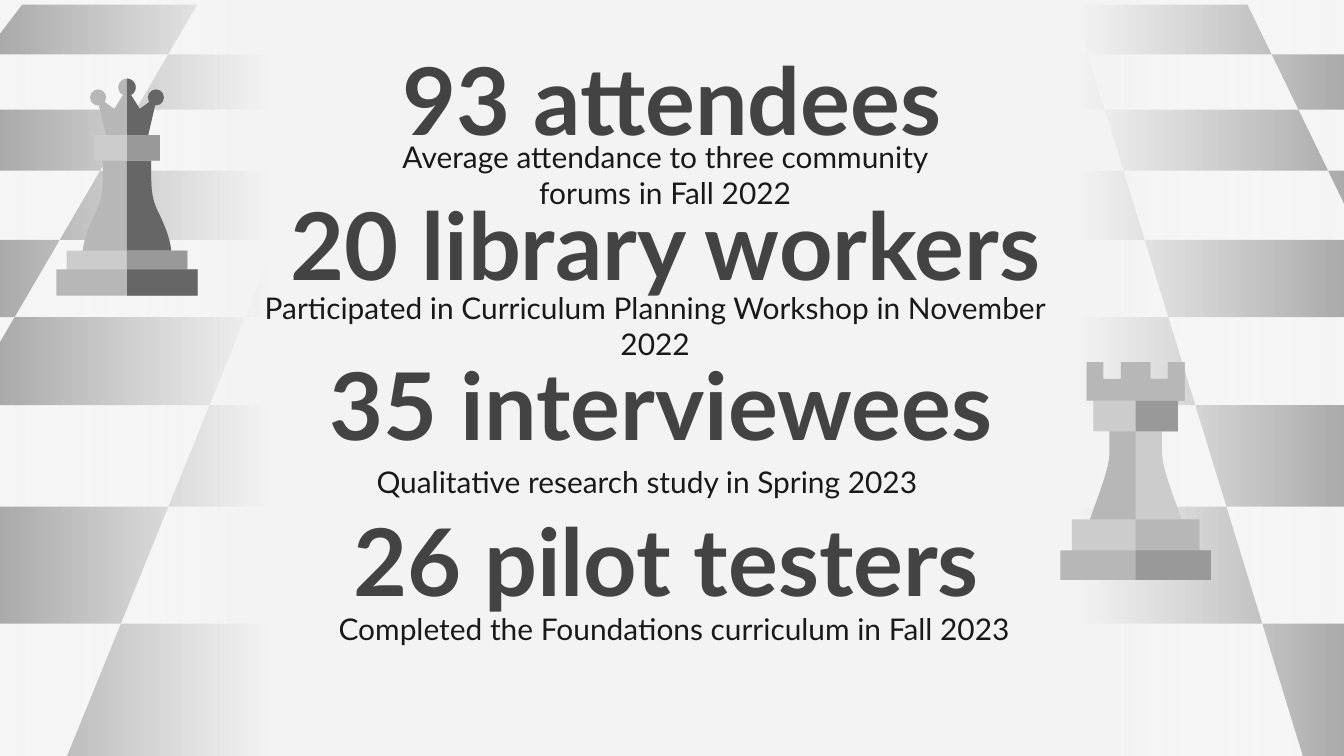
from dataclasses import dataclass

from lxml.etree import SubElement
from pptx import Presentation
from pptx.dml.color import RGBColor
from pptx.enum.shapes import MSO_SHAPE
from pptx.enum.text import MSO_ANCHOR, PP_ALIGN
from pptx.oxml.ns import qn
from pptx.util import Inches, Pt


@dataclass(frozen=True)
class Theme:
    font: str = "Lato"
    background: str = "F3F3F3"
    fade: str = "FFFFFF"
    heading: str = "434343"
    caption: str = "191919"
    light: str = "CCCCCC"
    mid: str = "B7B7B7"
    grey: str = "999999"
    dark: str = "666666"
    heading_size: int = 100
    caption_size: int = 32


T = Theme()


def paint(sp, colour):
    sp.shadow.inherit = False
    sp.line.fill.background()
    sp.fill.solid()
    sp.fill.fore_color.rgb = RGBColor.from_string(colour)


def add_polygon(shapes, points, colour):
    corners = [(Inches(x), Inches(y)) for x, y in points]
    builder = shapes.build_freeform(*corners[0])
    builder.add_line_segments(corners[1:])
    paint(builder.convert_to_shape(), colour)


prs = Presentation()
prs.slide_width, prs.slide_height = Inches(20), Inches(11.25)
s = prs.slides.add_slide(prs.slide_layouts[6])
s.background.fill.solid()
s.background.fill.fore_color.rgb = RGBColor.from_string(T.background)

# Chessboard in perspective: column k runs straight from top to bottom edge
row_edges = [0.07, 0.81, 1.63, 2.54, 3.57, 4.72, 6.03, 7.54, 9.28, 11.32]
board_top, board_bottom = row_edges[0], row_edges[-1]
board = s.shapes.add_group_shape().shapes
for row, (top, bottom) in enumerate(zip(row_edges, row_edges[1:])):
    for k in range(-4, 4):
        corners = []
        for col, y in ((k, top), (k, bottom), (k + 1, bottom), (k + 1, top)):
            depth = (y - board_top) / (board_bottom - board_top)
            x_top, x_bottom = 10.75 + 2.605 * col, 10.19 + 4.61 * col
            corners.append((x_top + (x_bottom - x_top) * depth, y))
        xs = [x for x, y in corners]
        if (row + k) % 2 == 0 and max(xs) > 0 and min(xs) < 20:
            add_polygon(board, corners, T.grey)

# Fade that clears the middle of the board
sp = s.shapes.add_shape(MSO_SHAPE.RECTANGLE, Inches(-0.77), Inches(-0.48),
                        Inches(21.57), Inches(12.48))
sp.shadow.inherit = False
sp.line.fill.background()
sp.fill.gradient()
sp.fill.gradient_angle = 180
stops = sp._element.spPr.find(qn("a:gradFill")).find(qn("a:gsLst"))
for stop in list(stops):
    stops.remove(stop)
for percent, colour, alpha in ((0, T.fade, 0), (22, T.background, 100),
                               (78, T.background, 100), (100, T.fade, 0)):
    stop = SubElement(stops, qn("a:gs"), pos=str(percent * 1000))
    rgb = SubElement(stop, qn("a:srgbClr"), val=colour)
    SubElement(rgb, qn("a:alpha"), val=str(alpha * 1000))

# Headings and captions: text, left, top, width, height, is heading
texts = [
    ("Average attendance to three community forums in Fall 2022", 5.3, 2.2, 9.2, 0.8, False),
    ("93 attendees", 5.4, 1.1, 9.2, 1.4, True),
    ("20 library workers", 3.21, 3.26, 13.38, 1.4, True),
    ("Participated in Curriculum Planning Workshop in November 2022",
     3.72, 4.44, 12.06, 0.8, False),
    ("35 interviewees ", 4.5, 5.64, 11, 1.4, True),
    ("Qualitative research study in Spring 2023", 5.03, 6.76, 9.2, 0.8, False),
    ("26 pilot testers ", 4.58, 7.96, 11, 1.4, True),
    ("Completed the Foundations curriculum in Fall 2023", 4.64, 8.95, 10.79, 0.8, False),
]
for text, left, top, width, height, is_heading in texts:
    tf = s.shapes.add_textbox(Inches(left), Inches(top), Inches(width), Inches(height)).text_frame
    tf.word_wrap = True
    tf.margin_left = tf.margin_right = tf.margin_top = tf.margin_bottom = Inches(0.2)
    tf.vertical_anchor = MSO_ANCHOR.BOTTOM if is_heading else MSO_ANCHOR.MIDDLE
    p = tf.paragraphs[0]
    p.text = text
    p.alignment = PP_ALIGN.CENTER
    p.font.name = T.font
    p.font.bold = is_heading
    p.font.size = Pt(T.heading_size if is_heading else T.caption_size)
    p.font.color.rgb = RGBColor.from_string(T.heading if is_heading else T.caption)

# Chess pieces, symmetric about an axis; x is the distance from that axis.
# outline: right half from top to bottom, three pairs together make a curve
# slab: top, height, half width; ball: centre x, centre y, radius
queen = [
    ("outline", [(0, 2.3), (0.36, 2.3), (0.36, 2.64),
                 ((0.36, 3.06), (0.47, 3.12), (0.56, 3.37)),
                 ((0.63, 3.53), (0.66, 3.7), (0.66, 3.76)), (0, 3.76)], T.mid, T.dark),
    ("outline", [(0, 1.32), (0.19, 1.62), (0.45, 1.43), (0.3, 2.07), (0, 2.07)], T.mid, T.dark),
    ("slab", (2.01, 0.38, 0.49), T.light, T.grey),
    ("slab", (3.73, 0.29, 0.9), T.light, T.grey),
    ("slab", (4.01, 0.39, 1.05), T.mid, T.dark),
    ("outline", [(0, 1.17), ((0.07, 1.17), (0.13, 1.23), (0.13, 1.3)),
                 ((0.13, 1.37), (0.07, 1.43), (0, 1.43))], T.mid, T.dark),
    ("ball", (0.43, 1.45, 0.12), T.mid, T.dark),
]
rook = [
    ("outline", [(0, 6.39), (0.39, 6.39), (0.39, 6.75),
                 ((0.39, 7.05), (0.73, 7.77), (0.73, 7.93)), (0, 7.93)], T.mid, T.light),
    ("slab", (7.73, 0.47, 0.95), T.light, T.mid),
    ("slab", (8.19, 0.44, 1.12), T.mid, T.grey),
    ("slab", (5.92, 0.5, 0.63), T.light, T.grey),
    ("outline", [(0, 5.39), (0.22, 5.39), (0.22, 5.64), (0.48, 5.64), (0.48, 5.39),
                 (0.73, 5.39), (0.73, 5.96), (0, 5.96)], T.mid, T.mid),
]
for axis, parts in ((1.89, queen), (16.9, rook)):
    piece = s.shapes.add_group_shape().shapes
    for kind, data, left_colour, right_colour in parts:
        if kind == "slab":
            top, height, half = data
            for left, width, colour in ((axis - half, 2 * half, left_colour),
                                        (axis, half, right_colour)):
                paint(piece.add_shape(MSO_SHAPE.RECTANGLE, Inches(left), Inches(top),
                                      Inches(width), Inches(height)), colour)
        elif kind == "ball":
            x, y, radius = data
            for centre, colour in ((axis - x, left_colour), (axis + x, right_colour)):
                paint(piece.add_shape(MSO_SHAPE.OVAL, Inches(centre - radius), Inches(y - radius),
                                      Inches(2 * radius), Inches(2 * radius)), colour)
        else:
            half = []
            for step in data:
                if len(step) == 2:
                    half.append(step)
                    continue
                a, (b, c, d) = half[-1], step
                for i in range(1, 13):
                    t = i / 12
                    u = 1 - t
                    half.append(tuple(u**3 * a[n] + 3 * u * u * t * b[n] + 3 * u * t * t * c[n]
                                      + t**3 * d[n] for n in (0, 1)))
            right = [(axis + x, y) for x, y in half]
            mirrored = [(axis - x, y) for x, y in reversed(half)]
            add_polygon(piece, right + mirrored, left_colour)
            add_polygon(piece, right, right_colour)

prs.save("out.pptx")
